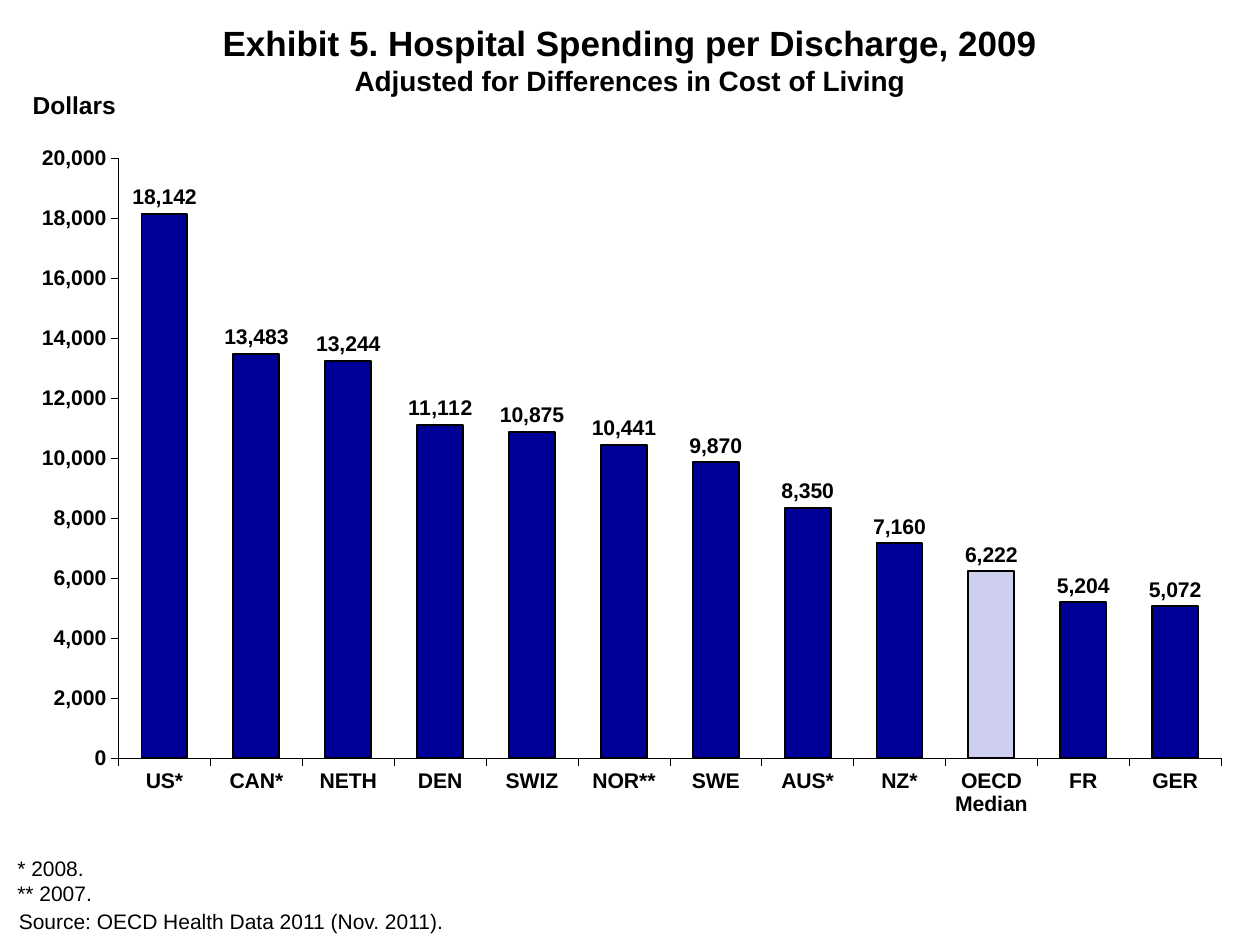
import dataclasses

import pptx
import pptx.chart.data
import pptx.dml.color
import pptx.enum.chart
import pptx.enum.text
import pptx.oxml
import pptx.oxml.ns
import pptx.util
from pptx.util import Cm, Pt


@dataclasses.dataclass(frozen=True)
class Theme:
    font: str = "Arial"
    chart_font: str = "Times New Roman"
    ink: pptx.dml.color.RGBColor = pptx.dml.color.RGBColor(0, 0, 0)
    bar: pptx.dml.color.RGBColor = pptx.dml.color.RGBColor(0, 0, 0x99)
    median_bar: pptx.dml.color.RGBColor = pptx.dml.color.RGBColor(0xCE, 0xCE, 0xEF)
    title: float = 20
    subtitle: float = 16
    unit: float = 14
    note: float = 12
    chart_base: float = 15.3
    chart_label: float = 12.1


theme = Theme()


def style_font(font, size, bold=False, name=theme.font):
    font.name = name
    font.size = Pt(size)
    font.bold = bold
    font.color.rgb = theme.ink


def add_text(box, lines, size, bold=False, wrap=False):
    """Add a text box with one paragraph per line and return its frame."""
    frame = slide.shapes.add_textbox(*map(Cm, box)).text_frame
    frame.word_wrap = wrap
    for index, line in enumerate(lines):
        paragraph = frame.add_paragraph() if index else frame.paragraphs[0]
        run = paragraph.add_run()
        run.text = line
        style_font(run.font, size, bold)
    return frame


spending = {
    "US*": 18142, "CAN*": 13483, "NETH": 13244, "DEN": 11112,
    "SWIZ": 10875, "NOR**": 10441, "SWE": 9870, "AUS*": 8350,
    "NZ*": 7160, "OECD Median": 6222, "FR": 5204, "GER": 5072,
}

presentation = pptx.Presentation()
presentation.slide_width = Cm(25.4)
presentation.slide_height = Cm(19.05)
slide = presentation.slides.add_slide(presentation.slide_layouts[6])

# Heading
heading = add_text((0, 0.25, 25.4, 2.03),
                   ["Exhibit 5. Hospital Spending per Discharge, 2009"],
                   theme.title, bold=True, wrap=True)
heading.margin_top = Cm(0.18)
heading_line = heading.paragraphs[0]
heading_line.alignment = pptx.enum.text.PP_ALIGN.CENTER
heading_line.add_line_break()
subtitle = heading_line.add_run()
subtitle.text = "Adjusted for Differences in Cost of Living"
style_font(subtitle.font, theme.subtitle, bold=True)

# Spending chart
chart_data = pptx.chart.data.CategoryChartData(number_format="#,##0")
chart_data.categories = list(spending)
chart_data.add_series("Series 1", list(spending.values()))
chart = slide.shapes.add_chart(
    pptx.enum.chart.XL_CHART_TYPE.COLUMN_CLUSTERED,
    Cm(0.64), Cm(2.57), Cm(23.98), Cm(14.4), chart_data).chart
chart.has_legend = False
chart.has_title = False
style_font(chart.font, theme.chart_base, name=theme.chart_font)

for axis in (chart.category_axis, chart.value_axis):
    axis.has_major_gridlines = False
    axis.major_tick_mark = pptx.enum.chart.XL_TICK_MARK.OUTSIDE
    axis.minor_tick_mark = pptx.enum.chart.XL_TICK_MARK.NONE
    axis.format.line.color.rgb = theme.ink
    axis.format.line.width = Pt(0.27)
    style_font(axis.tick_labels.font, theme.chart_label, bold=True)

dollars = chart.value_axis
dollars.minimum_scale = 0
dollars.maximum_scale = 20000
dollars.major_unit = 2000
dollars.tick_labels.number_format = "#,##0"
dollars.tick_labels.number_format_is_linked = False

plot = chart.plots[0]
plot.gap_width = 100
plot.vary_by_categories = False
bars = plot.series[0]
median = bars.points[list(spending).index("OECD Median")]
for part, color in ((bars, theme.bar), (median, theme.median_bar)):
    part.format.fill.solid()
    part.format.fill.fore_color.rgb = color
    part.format.line.color.rgb = theme.ink
    part.format.line.width = Pt(1.1)

labels = bars.data_labels
labels.show_value = True
labels.position = pptx.enum.chart.XL_LABEL_POSITION.OUTSIDE_END
labels.number_format = "#,##0"
labels.number_format_is_linked = False
style_font(labels.font, theme.chart_label, bold=True)

# Fixed inner plot area, as fractions of the chart
plot_area = chart.element.find(".//" + pptx.oxml.ns.qn("c:plotArea"))
for automatic in plot_area.findall(pptx.oxml.ns.qn("c:layout")):
    plot_area.remove(automatic)
settings = (("layoutTarget", "inner"), ("xMode", "edge"), ("yMode", "edge"),
            ("x", 0.074), ("y", 0.043), ("w", 0.927), ("h", 0.84))
plot_area.insert(0, pptx.oxml.parse_xml(
    f'<c:layout {pptx.oxml.ns.nsdecls("c")}><c:manualLayout>'
    + "".join(f'<c:{key} val="{value}"/>' for key, value in settings)
    + "</c:manualLayout></c:layout>"))

# Unit and notes
add_text((0.41, 1.7, 2.21, 0.86), ["Dollars"], theme.unit, bold=True)
add_text((0.1, 17.12, 2.03, 1.27), ["* 2008.", "** 2007."], theme.note)
add_text((0.13, 18.19, 10.31, 0.76),
         ["Source: OECD Health Data 2011 (Nov. 2011)."], theme.note, wrap=True)

presentation.save("out.pptx")
